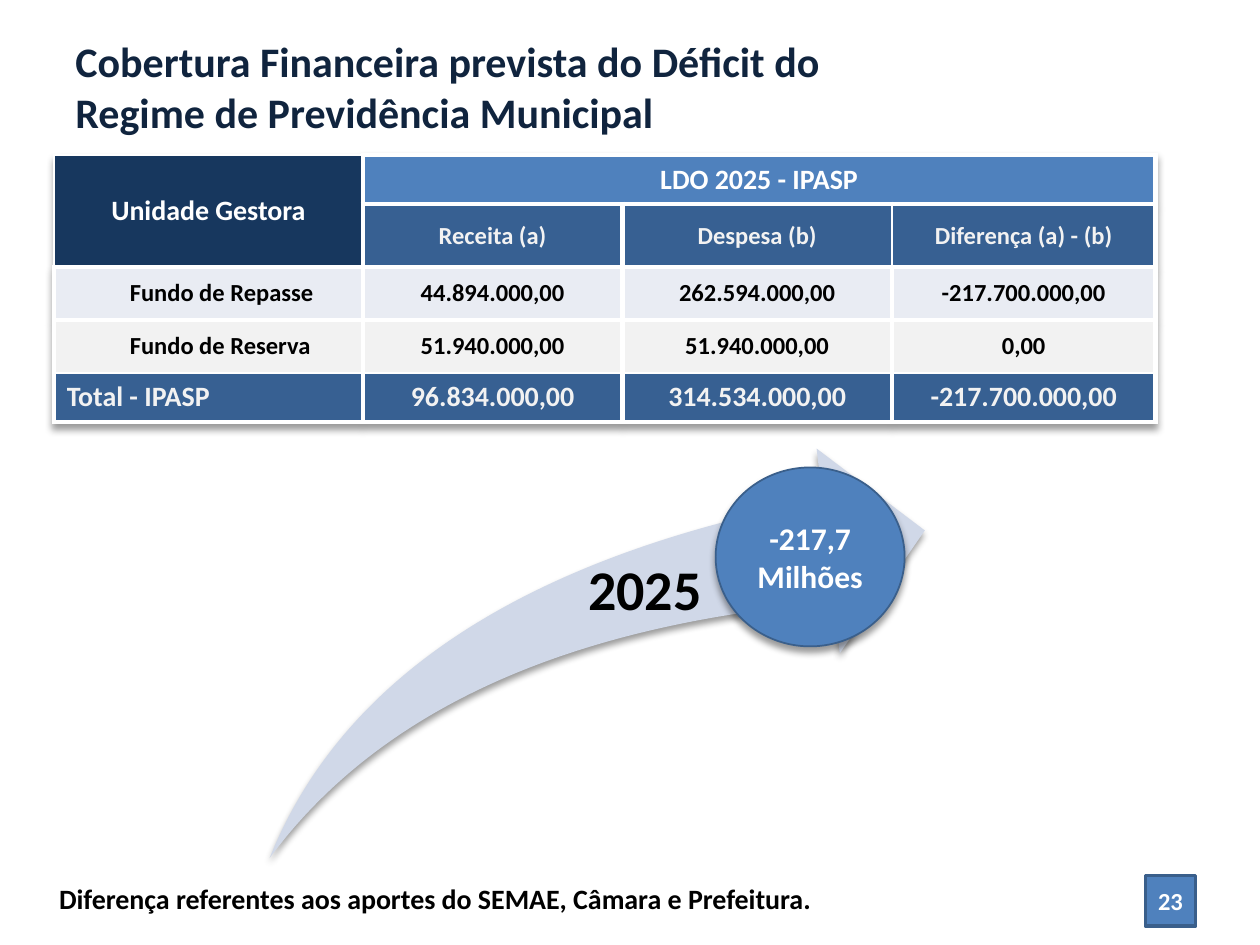
"""Build the slide on the planned coverage of the municipal pension deficit."""
from dataclasses import dataclass
from typing import Optional

import lxml.etree
import pptx
import pptx.dml.color
import pptx.enum.shapes
import pptx.enum.text
import pptx.oxml
import pptx.oxml.ns
import pptx.util

Inches = pptx.util.Inches
Pt = pptx.util.Pt
RGBColor = pptx.dml.color.RGBColor
MSO_SHAPE = pptx.enum.shapes.MSO_SHAPE
ANCHOR = pptx.enum.text.MSO_ANCHOR
LEFT = pptx.enum.text.PP_ALIGN.LEFT
CENTER = pptx.enum.text.PP_ALIGN.CENTER
qn = pptx.oxml.ns.qn

FONT = "Calibri"
WHITE = RGBColor(0xFF, 0xFF, 0xFF)
BLACK = RGBColor(0x00, 0x00, 0x00)
TITLE_NAVY = RGBColor(0x10, 0x24, 0x3E)
NAVY = RGBColor(0x17, 0x37, 0x5E)
BLUE = RGBColor(0x4F, 0x81, 0xBD)
DARK_BLUE = RGBColor(0x37, 0x60, 0x92)
OUTLINE = RGBColor(0x3A, 0x5F, 0x8B)
PALE_BLUE = RGBColor(0xD0, 0xD8, 0xE8)
ROW_BLUE = RGBColor(0xE9, 0xEC, 0xF3)
GRAY = RGBColor(0xF2, 0xF2, 0xF2)

COL_WIDTHS = (2.45, 2.06, 2.14, 2.09)
ROW_HEIGHTS = (0.39, 0.5, 0.42, 0.42, 0.39)
THICK, THIN = 3, 0.96
THIN_SIDES = {(0, 0): "LT", (1, 0): "L", (1, 2): "R", (1, 3): "L"}
THIN_SIDES.update({(3, c): "B" for c in range(4)})
THIN_SIDES.update({(4, c): "T" for c in range(4)})


@dataclass(frozen=True)
class Style:
    size: float
    color: RGBColor
    align: pptx.enum.text.PP_ALIGN = CENTER
    anchor: pptx.enum.text.MSO_ANCHOR = ANCHOR.MIDDLE
    indent: float = 0


@dataclass(frozen=True)
class Row:
    texts: tuple
    fill: RGBColor
    style: Style
    first: Style


@dataclass(frozen=True)
class Label:
    text: str
    box: tuple
    style: Style
    margins: tuple = (0.1, 0.05, 0.1, 0.05)
    spacing: Optional[float] = None


@dataclass(frozen=True)
class Figure:
    kind: pptx.enum.shapes.MSO_SHAPE
    box: tuple
    fill: RGBColor
    line_width: float = 0
    shadow: bool = False
    text: str = ""
    style: Style = Style(18, WHITE)


HEAD = Style(16, WHITE)
SUBHEAD = Style(14, GRAY)
VALUE = Style(14, BLACK)
FUND = Style(14, BLACK, LEFT, indent=0.5)
TOTAL = Style(16, GRAY)

ROWS = (
    Row(("Unidade Gestora", "LDO 2025 - IPASP", "", ""), BLUE, HEAD, HEAD),
    Row(("", "Receita (a)", "Despesa (b)", "Diferença (a) - (b)"),
        DARK_BLUE, SUBHEAD, SUBHEAD),
    Row(("Fundo de Repasse", "44.894.000,00", "262.594.000,00", "-217.700.000,00"),
        ROW_BLUE, VALUE, FUND),
    Row(("Fundo de Reserva", "51.940.000,00", "51.940.000,00", "0,00"),
        GRAY, VALUE, FUND),
    Row(("Total - IPASP", "96.834.000,00", "314.534.000,00", "-217.700.000,00"),
        DARK_BLUE, TOTAL, Style(16, GRAY, LEFT)),
)

TITLE = Label("Cobertura Financeira prevista do Déficit do Regime de Previdência Municipal",
              (0.5, 0.3, 6.78, 0.77), Style(24, TITLE_NAVY, LEFT))
YEAR = Label("2025", (4.22, 4.46, 2, 0.74), Style(32, BLACK, anchor=ANCHOR.TOP),
             (0, 0, 0.2, 0), 0.9)
FOOTNOTE = Label("Diferença referentes aos aportes do SEMAE, Câmara e Prefeitura.",
                 (0.13, 6.95, 8.29, 0.37),
                 Style(16, BLACK, LEFT, ANCHOR.TOP, 0.24))

SWOOSH = Figure(MSO_SHAPE.SWOOSH_ARROW, (2.14, 3.56, 5.2, 3.25), PALE_BLUE, shadow=True)
DEFICIT = Figure(MSO_SHAPE.OVAL, (5.68, 3.71, 1.5, 1.42), BLUE, 1, True, "-217,7\nMilhões")
PAGE_NUMBER = Figure(MSO_SHAPE.RECTANGLE, (9.09, 6.95, 0.4, 0.4), BLUE, 2,
                     text="23", style=Style(14, WHITE))


def format_text(tf, style: Style) -> None:
    for p in tf.paragraphs:
        p.alignment = style.align
        if style.indent:
            pPr = p._p.get_or_add_pPr()
            pPr.set("marL", str(Inches(style.indent)))
            pPr.set("indent", "0")
        for r in p.runs:
            r.font.name = FONT
            r.font.size = Pt(style.size)
            r.font.bold = True
            r.font.color.rgb = style.color


def shadow_effect():
    return pptx.oxml.parse_xml(
        '<a:effectLst xmlns:a="http://schemas.openxmlformats.org/drawingml/2006/main">'
        f'<a:outerShdw blurRad="{Pt(4)}" dist="{Pt(3)}" dir="5400000" rotWithShape="0">'
        '<a:srgbClr val="000000"><a:alpha val="40000"/></a:srgbClr>'
        '</a:outerShdw></a:effectLst>')


def add_label(s, label: Label) -> None:
    sp = s.shapes.add_textbox(*map(Inches, label.box))
    tf = sp.text_frame
    tf.word_wrap = True
    tf.vertical_anchor = label.style.anchor
    tf.margin_left, tf.margin_top, tf.margin_right, tf.margin_bottom = map(Inches, label.margins)
    tf.text = label.text
    if label.spacing:
        tf.paragraphs[0].line_spacing = label.spacing
    format_text(tf, label.style)


def add_figure(s, figure: Figure):
    sp = s.shapes.add_shape(figure.kind, *map(Inches, figure.box))
    sp.shadow.inherit = False
    sp.fill.solid()
    sp.fill.fore_color.rgb = figure.fill
    if figure.line_width:
        sp.line.color.rgb = OUTLINE
        sp.line.width = Pt(figure.line_width)
    else:
        sp.line.fill.background()
    if figure.shadow:
        effects = sp._element.spPr.find(qn("a:effectLst"))
        effects.getparent().replace(effects, shadow_effect())
    if figure.text:
        tf = sp.text_frame
        tf.text = figure.text
        tf.word_wrap = False
        tf.vertical_anchor = figure.style.anchor
        format_text(tf, figure.style)
    return sp


def set_borders(cell, thin_sides: str) -> None:
    tcPr = cell._tc.get_or_add_tcPr()
    for i, side in enumerate("LRTB"):
        ln = lxml.etree.Element(qn(f"a:ln{side}"))
        ln.set("w", str(Pt(THIN if side in thin_sides else THICK)))
        fill = lxml.etree.SubElement(ln, qn("a:solidFill"))
        lxml.etree.SubElement(fill, qn("a:srgbClr")).set("val", str(WHITE))
        tcPr.insert(i, ln)


def add_budget_table(s) -> None:
    frame = s.shapes.add_table(len(ROWS), len(COL_WIDTHS), Inches(0.43), Inches(1.23),
                               Inches(sum(COL_WIDTHS)), Inches(sum(ROW_HEIGHTS)))
    table = frame.table
    table._tbl.tblPr.insert(0, shadow_effect())
    for column, width in zip(table.columns, COL_WIDTHS):
        column.width = Inches(width)
    for r, (row, height) in enumerate(zip(ROWS, ROW_HEIGHTS)):
        table.rows[r].height = Inches(height)
        for c, text in enumerate(row.texts):
            cell = table.cell(r, c)
            cell.fill.solid()
            cell.fill.fore_color.rgb = NAVY if c == 0 and r < 2 else row.fill
            cell.vertical_anchor = ANCHOR.MIDDLE
            cell.text_frame.text = text
            format_text(cell.text_frame, row.style if c else row.first)
            set_borders(cell, THIN_SIDES.get((r, c), ""))
    table.cell(0, 0).merge(table.cell(1, 0))
    table.cell(0, 1).merge(table.cell(0, 3))


def main() -> None:
    prs = pptx.Presentation()
    prs.slide_width, prs.slide_height = Inches(10), Inches(7.5)
    s = prs.slides.add_slide(prs.slide_layouts[6])
    add_label(s, TITLE)
    add_budget_table(s)
    swoosh = add_figure(s, SWOOSH)
    swoosh.adjustments[0] = swoosh.adjustments[1] = 0.25
    add_label(s, YEAR)
    add_figure(s, DEFICIT)
    add_figure(s, PAGE_NUMBER)
    add_label(s, FOOTNOTE)
    prs.save("out.pptx")


if __name__ == "__main__":
    main()
